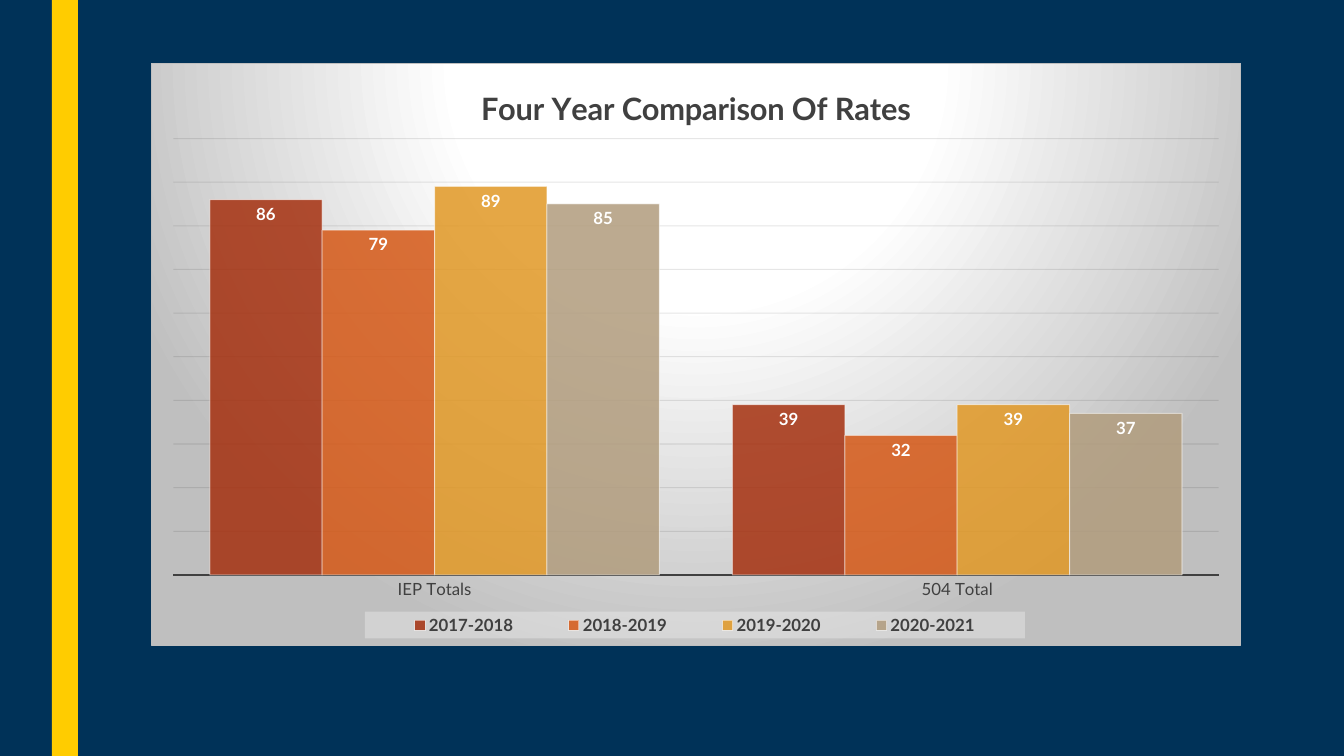
"""Build the four year rate comparison slide."""
from lxml import etree
from pptx import Presentation
from pptx import util as u
from pptx.chart.data import CategoryChartData
from pptx.dml.color import RGBColor
from pptx.enum import chart as ch, shapes
from pptx.oxml import parse_xml
from pptx.oxml.ns import nsdecls, qn

NAVY = RGBColor(0x00, 0x32, 0x58)
GOLD = RGBColor(0xFF, 0xCC, 0x00)
WHITE = RGBColor(0xFF, 0xFF, 0xFF)
BLACK = RGBColor(0x00, 0x00, 0x00)
DARK = RGBColor(0x40, 0x40, 0x40)
GRID = RGBColor(0x0D, 0x0D, 0x0D)
SILVER = RGBColor(0xBF, 0xBF, 0xBF)
PALE = RGBColor(0xF2, 0xF2, 0xF2)

FONT = "Lato"
TITLE = "Four Year Comparison Of Rates"
CATEGORIES = ["IEP Totals", "504 Total"]
SERIES = [
    ("2017-2018", (86, 39), RGBColor(0xA5, 0x30, 0x0F)),
    ("2018-2019", (79, 32), RGBColor(0xD5, 0x58, 0x16)),
    ("2019-2020", (89, 39), RGBColor(0xE1, 0x98, 0x25)),
    ("2020-2021", (85, 37), RGBColor(0xB1, 0x9C, 0x7D)),
]
SLIDE = (1344, 756)
STRIPE = (52, 0, 26, 756)
CHART = (151, 63, 1090, 583)
PLOT = (173, 138, 1046, 437)
LEGEND = (365, 612, 661, 27)
GRADIENT = [(0, WHITE), (39, WHITE), (100, SILVER)]


def px(*values):
    return [u.Emu(round(v * 12192000 / 1344)) for v in values]


def style_font(font, size, color, bold=False):
    font.name, font.size, font.bold = FONT, u.Pt(size), bold
    font.color.rgb = color


def style_line(line, color, width):
    line.color.rgb, line.width = color, u.Pt(width)


def set_alpha(element, route, percent):
    for color in element.xpath(route + "/a:solidFill/a:srgbClr"):
        etree.SubElement(color, qn("a:alpha")).set("val", str(percent * 1000))


def layout(box, target=""):
    x, y, w, h = box
    cx, cy, cw, chh = CHART
    parts = [("xMode", "edge"), ("yMode", "edge"),
             ("x", round((x - cx) / cw, 3)), ("y", round((y - cy) / chh, 3)),
             ("w", round(w / cw, 3)), ("h", round(h / chh, 3))]
    if target:
        parts.insert(0, ("layoutTarget", target))
    body = "".join(f'<c:{k} val="{v}"/>' for k, v in parts)
    return parse_xml(f'<c:layout {nsdecls("c")}><c:manualLayout>{body}'
                     '</c:manualLayout></c:layout>')


def drop_layout(element):
    for old in element.findall(qn("c:layout")):
        element.remove(old)


def add_stripe(s):
    sp = s.shapes.add_shape(shapes.MSO_SHAPE.RECTANGLE, *px(*STRIPE))
    sp.shadow.inherit = False
    sp.fill.solid()
    sp.fill.fore_color.rgb = GOLD
    sp.line.fill.background()


def style_series(plot):
    for ser, (_, _, color) in zip(plot.series, SERIES):
        ser.format.fill.solid()
        ser.format.fill.fore_color.rgb = color
        style_line(ser.format.line, WHITE, 0.75)
        set_alpha(ser._element, "c:spPr", 85)
        set_alpha(ser._element, "c:spPr/a:ln", 50)
        labels = ser.data_labels
        labels.show_value = True
        labels.position = ch.XL_LABEL_POSITION.INSIDE_END
        style_font(labels.font, 12, WHITE, True)


def style_axes(chart):
    cat, val = chart.category_axis, chart.value_axis
    cat.major_tick_mark = cat.minor_tick_mark = ch.XL_TICK_MARK.NONE
    style_font(cat.tick_labels.font, 12, DARK)
    style_line(cat.format.line, DARK, 1.5)
    val.minimum_scale, val.maximum_scale, val.major_unit = 0, 100, 10
    val.visible = False
    val.has_major_gridlines = True
    style_line(val.major_gridlines.format.line, GRID, 0.75)
    set_alpha(val._element, "c:majorGridlines/c:spPr/a:ln", 10)


def style_legend(chart):
    chart.has_legend = True
    legend = chart.legend
    legend.position = ch.XL_LEGEND_POSITION.BOTTOM
    legend.include_in_layout = False
    style_font(legend.font, 12, DARK, True)
    el = legend._element
    drop_layout(el)
    el.find(qn("c:legendPos")).addnext(layout(LEGEND))
    el.find(qn("c:overlay")).addnext(parse_xml(
        f'<c:spPr {nsdecls("c", "a")}><a:solidFill><a:srgbClr val="{PALE}">'
        '<a:alpha val="39000"/></a:srgbClr></a:solidFill></c:spPr>'))


def style_background(chart):
    stops = "".join(f'<a:gs pos="{pos * 1000}"><a:srgbClr val="{color}"/></a:gs>'
                    for pos, color in GRADIENT)
    chart._chartSpace.find(qn("c:chart")).addnext(parse_xml(
        f'<c:spPr {nsdecls("c", "a")}><a:gradFill><a:gsLst>{stops}</a:gsLst>'
        '<a:path path="circle"><a:fillToRect l="50000" t="-80000" r="50000" '
        'b="180000"/></a:path></a:gradFill><a:ln w="9525"><a:solidFill>'
        f'<a:srgbClr val="{SILVER}"/></a:solidFill></a:ln></c:spPr>'))


def add_rates_chart(s):
    data = CategoryChartData()
    data.categories = CATEGORIES
    for name, values, _ in SERIES:
        data.add_series(name, values)
    chart = s.shapes.add_chart(ch.XL_CHART_TYPE.COLUMN_CLUSTERED,
                               *px(*CHART), data).chart
    style_font(chart.font, 10, BLACK)
    chart.has_title = True
    p = chart.chart_title.text_frame.paragraphs[0]
    p.text = TITLE
    style_font(p.runs[0].font, 22, DARK, True)
    chart.chart_title.include_in_layout = False
    plot = chart.plots[0]
    plot.gap_width, plot.overlap, plot.vary_by_categories = 65, 0, False
    style_series(plot)
    style_axes(chart)
    style_legend(chart)
    style_background(chart)
    area = chart._chartSpace.find(qn("c:chart")).find(qn("c:plotArea"))
    drop_layout(area)
    area.insert(0, layout(PLOT, "inner"))


def main():
    prs = Presentation()
    prs.slide_width, prs.slide_height = px(*SLIDE)
    s = prs.slides.add_slide(prs.slide_layouts[6])
    s.background.fill.solid()
    s.background.fill.fore_color.rgb = NAVY
    add_stripe(s)
    add_rates_chart(s)
    prs.save("out.pptx")


if __name__ == "__main__":
    main()
